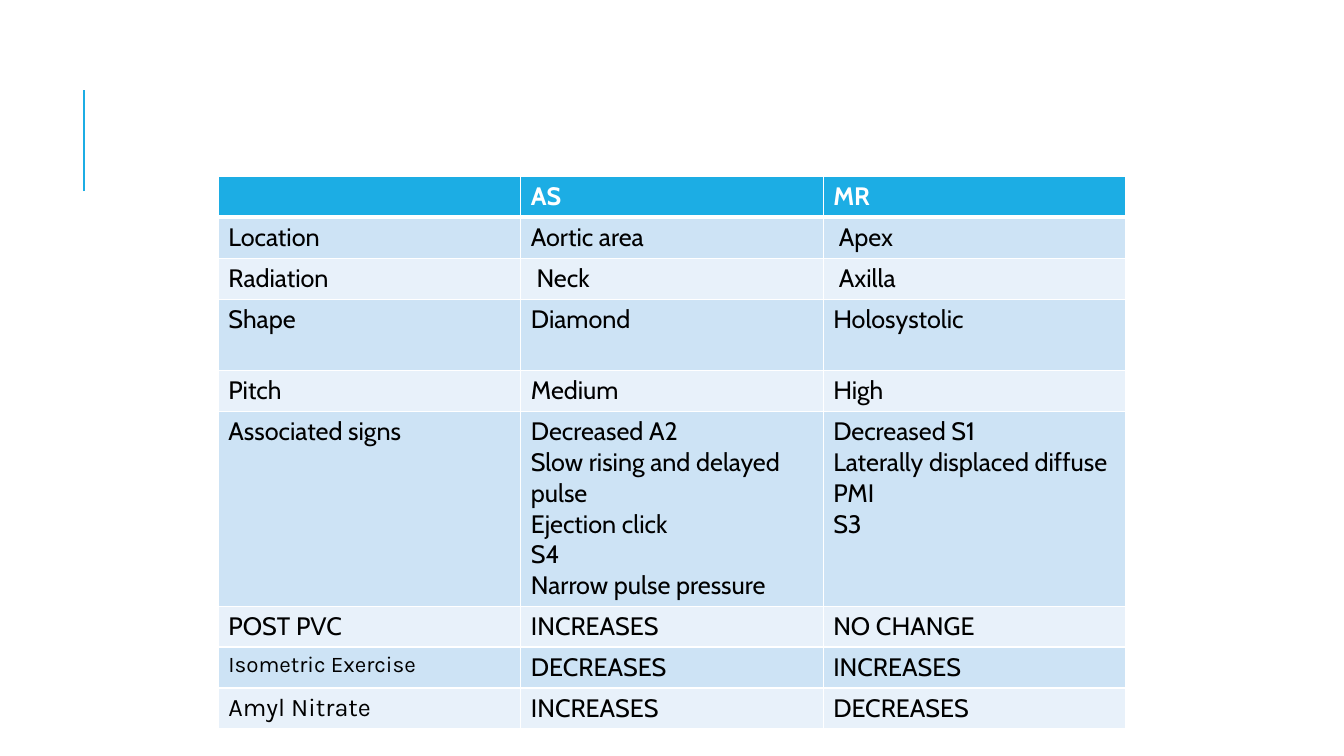
import dataclasses

import pptx
import pptx.dml.color
import pptx.enum.shapes
import pptx.oxml
import pptx.oxml.ns
import pptx.util

PX = 9525
HEADER_FILL = "1CADE4"
BAND_FILLS = ("CDE3F5", "E8F1FA")
WHITE, BLACK = "FFFFFF", "000000"
TABLE_LEFT, TABLE_TOP, COLUMN_WIDTH, ROW_HEIGHT = 208, 168, 288, 39
HEADINGS = ("", "AS", "MR")


@dataclasses.dataclass(frozen=True)
class Finding:
    label: str
    stenosis: str
    regurgitation: str
    height: int = ROW_HEIGHT
    label_font: str = "Cabin"
    label_size: int = 18


FINDINGS = (
    Finding("Location", "Aortic area", " Apex"),
    Finding("Radiation", " Neck", " Axilla"),
    Finding("Shape", "Diamond", "Holosystolic", height=68),
    Finding("Pitch", "Medium", "High"),
    Finding(
        "Associated signs",
        "Decreased A2\nSlow rising and delayed pulse\nEjection click\nS4\nNarrow pulse pressure",
        "Decreased S1\nLaterally displaced diffuse PMI\nS3",
        height=184,
    ),
    Finding("POST PVC", "INCREASES", "NO CHANGE"),
    Finding("Isometric Exercise", "DECREASES", "INCREASES", label_font="Karla", label_size=16),
    Finding("Amyl Nitrate", "INCREASES", "DECREASES", label_font="Karla"),
)


def px(length: int) -> int:
    return pptx.util.Emu(length * PX)


def rgb(colour: str) -> pptx.dml.color.RGBColor:
    return pptx.dml.color.RGBColor.from_string(colour)


def add_accent_line(page) -> None:
    line = page.shapes.add_connector(
        pptx.enum.shapes.MSO_CONNECTOR.STRAIGHT, px(80), px(182), px(80), px(86)
    )
    line.line.color.rgb = rgb(HEADER_FILL)
    line.line.width = pptx.util.Pt(1.5)
    pptx.oxml.ns.qn("a:effectLst")
    line._element.spPr.append(
        pptx.oxml.parse_xml(f'<a:effectLst {pptx.oxml.ns.nsdecls("a")}/>')
    )


def add_borders(cell, top: int, bottom: int) -> None:
    """Draw white borders; top and bottom are widths in points."""
    properties = cell._tc.get_or_add_tcPr()
    for side, points in {"L": 1, "R": 1, "T": top, "B": bottom}.items():
        properties.append(pptx.oxml.parse_xml(
            f'<a:ln{side} {pptx.oxml.ns.nsdecls("a")} w="{pptx.util.Pt(points)}">'
            f'<a:solidFill><a:srgbClr val="{WHITE}"/></a:solidFill></a:ln{side}>'
        ))


def fill_cell(cell, text: str, fill: str, colour: str, formats: dict) -> None:
    cell.fill.solid()
    cell.fill.fore_color.rgb = rgb(fill)
    if not text:
        return
    cell.text = text
    for para in cell.text_frame.paragraphs:
        for span in para.runs:
            span.font.color.rgb = rgb(colour)
            for name, value in formats.items():
                setattr(span.font, name, value)


def add_findings_table(page) -> None:
    heights = [ROW_HEIGHT] + [finding.height for finding in FINDINGS]
    table = page.shapes.add_table(
        len(heights), len(HEADINGS), px(TABLE_LEFT), px(TABLE_TOP),
        px(COLUMN_WIDTH * len(HEADINGS)), px(sum(heights)),
    ).table
    for column in table.columns:
        column.width = px(COLUMN_WIDTH)
    for index, (row, height) in enumerate(zip(table.rows, heights)):
        row.height = px(height)
        for cell in row.cells:
            add_borders(cell, top=3 if index == 1 else 1, bottom=3 if index == 0 else 1)

    body = {"name": "Cabin", "size": pptx.util.Pt(18), "bold": False}
    for cell, heading in zip(table.rows[0].cells, HEADINGS):
        fill_cell(cell, heading, HEADER_FILL, WHITE, body | {"bold": True})
    for index, finding in enumerate(FINDINGS):
        label = body | {"name": finding.label_font, "size": pptx.util.Pt(finding.label_size)}
        texts = (finding.label, finding.stenosis, finding.regurgitation)
        for cell, text, formats in zip(table.rows[index + 1].cells, texts, (label, body, body)):
            fill_cell(cell, text, BAND_FILLS[index % 2], BLACK, formats)


def main() -> None:
    deck = pptx.Presentation()
    deck.slide_width, deck.slide_height = px(1280), px(720)
    page = deck.slides.add_slide(deck.slide_layouts.get_by_name("Blank"))
    add_accent_line(page)
    add_findings_table(page)
    deck.save("out.pptx")


if __name__ == "__main__":
    main()
